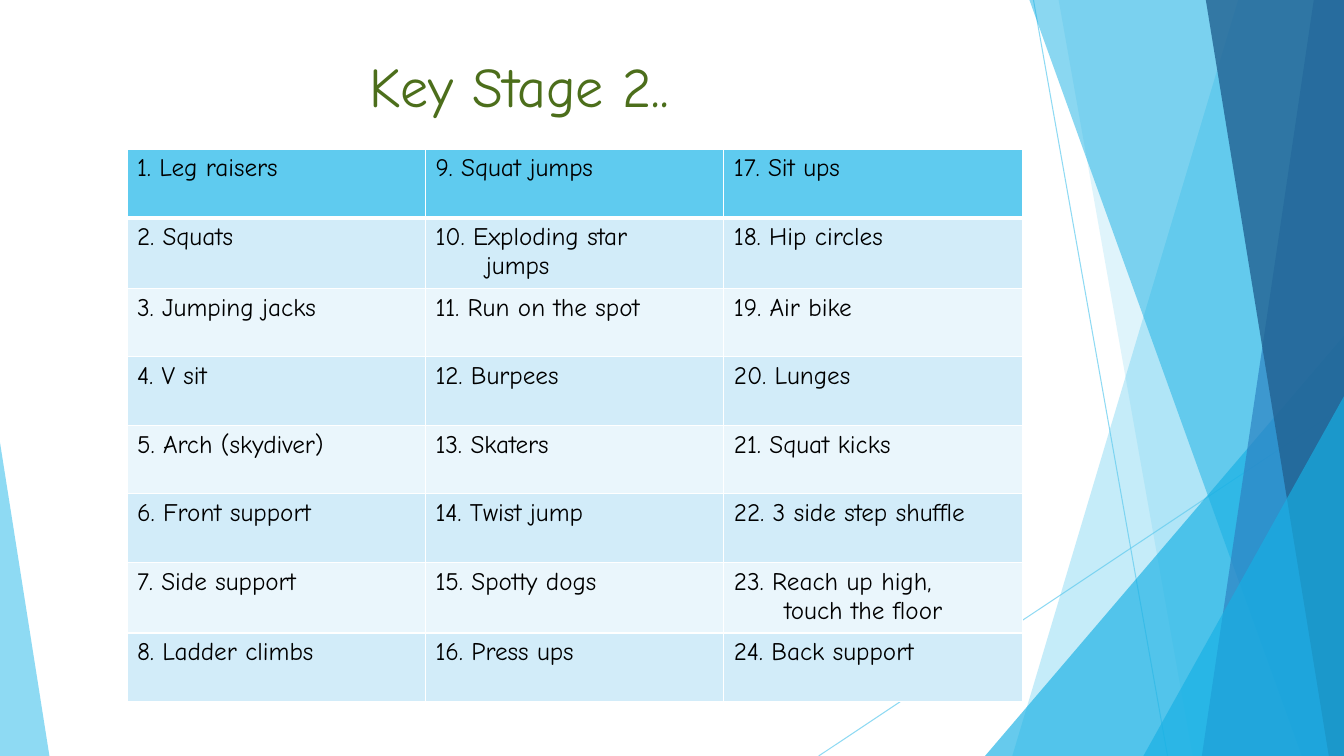
from lxml.etree import SubElement
from pptx import Presentation
from pptx.dml.color import RGBColor
from pptx.enum.shapes import MSO_CONNECTOR, MSO_SHAPE
from pptx.enum.text import MSO_ANCHOR, PP_ALIGN
from pptx.oxml.ns import qn
from pptx.util import Inches, Pt

# Content: each column reads downwards; a line break starts an indented line
TITLE = "Key Stage 2.."
EXERCISES = [
    "Leg raisers", "Squats", "Jumping jacks", "V sit",
    "Arch (skydiver)", "Front support", "Side support", "Ladder climbs",
    "Squat jumps", "Exploding star\njumps", "Run on the spot", "Burpees",
    "Skaters", "Twist jump", "Spotty dogs", "Press ups",
    "Sit ups", "Hip circles", "Air bike", "Lunges",
    "Squat kicks", "3 side step shuffle", "Reach up high,\ntouch the floor",
    "Back support",
]
ROWS, COLUMNS = 8, 3

# Style and measures in inches
FONT = "Comic Neue"
WIDTH, HEIGHT = 13.33, 7.5
HEADER, ODD_ROW, EVEN_ROW = "5FCBEF", "D2ECF9", "EAF6FC"
ROW_HEIGHT, TWO_LINE_HEIGHT = 0.68, 0.7
CONTINUATION_INDENT = 0.5

# Background, back to front
RAYS = [((10.25, 0), (11.58, 7.5)), ((13.33, 4.03), (8.12, 7.5))]
# band: top x, bottom x; triangle: left, top, width, apex position
FACETS = [
    ("band", (12.28, 10.04), "5FCBEF", 36),
    ("band", (10.5, 11.83), "5FCBEF", 20),
    ("triangle", (9.77, 3.33, 3.56, 1), "17B0E4", 66),
    ("band", (10.21, 12.91), "17B0E4", 50),
    ("band", (13.03, 11.92), "2E83C3", 70),
    ("band", (11.96, 13.18), "226292", 80),
    ("triangle", (11.34, 3.93, 1.99, 1), "17B0E4", 66),
    ("triangle", (0, 4.39, 0.49, 0), "5FCBEF", 70),
]


def paint(fill, color, opacity=100):
    fill.solid()
    fill.fore_color.rgb = RGBColor.from_string(color)
    if opacity < 100:
        choice = fill.fore_color._xFill[0]
        SubElement(choice, qn("a:alpha")).set("val", str(opacity * 1000))


def add_ray(page, start, end):
    ray = page.shapes.add_connector(
        MSO_CONNECTOR.STRAIGHT, *(Inches(v) for v in start + end))
    ray.line.width = Pt(0.75)
    paint(ray.line.fill, "5FCBEF", 70)
    SubElement(ray._element.spPr, qn("a:effectLst"))


def add_facet(page, kind, place, color, opacity):
    if kind == "band":
        top, bottom = place
        corners = [(top, 0), (WIDTH, 0), (WIDTH, HEIGHT), (bottom, HEIGHT)]
        points = [(Inches(x), Inches(y)) for x, y in corners]
        outline = page.shapes.build_freeform(*points[0], scale=1.0)
        outline.add_line_segments(points[1:], close=True)
        facet = outline.convert_to_shape()
    else:
        left, top, width, apex = place
        facet = page.shapes.add_shape(
            MSO_SHAPE.ISOSCELES_TRIANGLE, Inches(left), Inches(top),
            Inches(width), Inches(HEIGHT - top))
        facet.adjustments[0] = apex
    facet.shadow.inherit = False
    facet.line.fill.background()
    paint(facet.fill, color, opacity)


def add_borders(cell, bottom_width):
    properties = cell._tc.get_or_add_tcPr()
    widths = {"a:lnL": 1, "a:lnR": 1, "a:lnT": 1, "a:lnB": bottom_width}
    for position, (side, width) in enumerate(widths.items()):
        border = SubElement(properties, qn(side), w=str(Pt(width)))
        solid = SubElement(border, qn("a:solidFill"))
        SubElement(solid, qn("a:srgbClr"), val="FFFFFF")
        properties.insert(position, border)


def write_cell(cell, text):
    cell.text = text
    for number, para in enumerate(cell.text_frame.paragraphs):
        para.font.name = FONT
        para.font.size = Pt(18)
        para.font.bold = False
        para.font.color.rgb = RGBColor.from_string("000000")
        if number:
            para._p.get_or_add_pPr().set(
                "marL", str(Inches(CONTINUATION_INDENT)))


def add_exercises(page):
    table = page.shapes.add_table(
        ROWS, COLUMNS, Inches(1.26), Inches(1.48), Inches(8.88),
        Inches(ROWS * ROW_HEIGHT)).table
    for index, exercise in enumerate(EXERCISES):
        column, row = divmod(index, ROWS)
        cell = table.cell(row, column)
        write_cell(cell, f"{index + 1}. {exercise}")
        paint(cell.fill, HEADER if row == 0 else (EVEN_ROW, ODD_ROW)[row % 2])
        add_borders(cell, 3 if row == 0 else 1)
        if "\n" in exercise:
            table.rows[row].height = Inches(TWO_LINE_HEIGHT)


def add_title(page):
    title = page.shapes.title
    title.left, title.top = Inches(1.82), Inches(0.46)
    title.width, title.height = Inches(6.66), Inches(0.77)
    title.text_frame.text = TITLE
    title.text_frame.vertical_anchor = MSO_ANCHOR.MIDDLE
    para = title.text_frame.paragraphs[0]
    para.alignment = PP_ALIGN.CENTER
    para.font.name = FONT
    para.font.size = Pt(40)
    para.font.color.rgb = RGBColor.from_string("4C6E1B")


def main():
    deck = Presentation()
    deck.slide_width, deck.slide_height = Inches(WIDTH), Inches(HEIGHT)
    page = deck.slides.add_slide(deck.slide_layouts[5])
    for start, end in RAYS:
        add_ray(page, start, end)
    for facet in FACETS:
        add_facet(page, *facet)
    add_title(page)
    add_exercises(page)
    deck.save("out.pptx")


if __name__ == "__main__":
    main()
